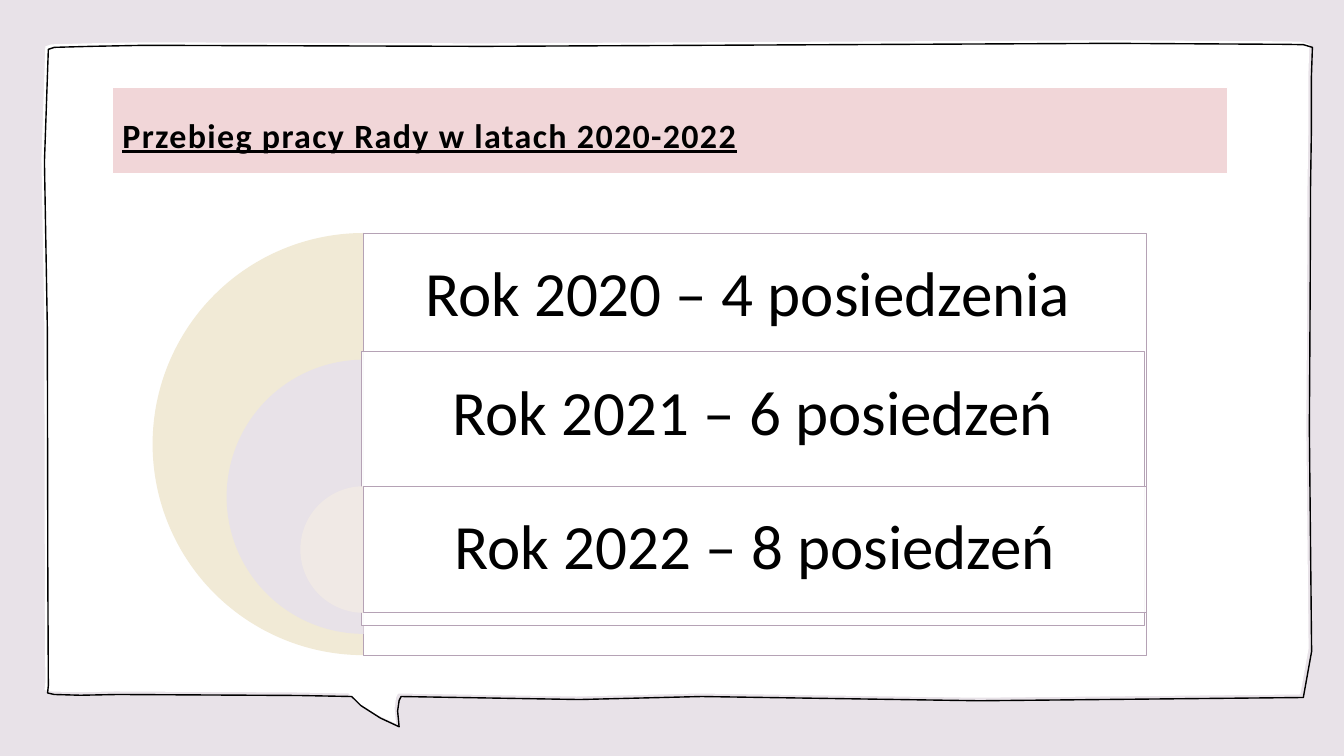
import dataclasses
import typing

import pptx
import pptx.dml.color
import pptx.enum.shapes
import pptx.enum.text
import pptx.oxml
import pptx.oxml.ns
import pptx.shapes.autoshape
import pptx.slide
import pptx.text.text
import pptx.util

COLUMNS = 133.33
ROWS = 75
CELL = pptx.util.Inches(0.1)

LILAC = pptx.dml.color.RGBColor(0xE8, 0xE2, 0xE8)
MAUVE = pptx.dml.color.RGBColor(0xB5, 0xA2, 0xB5)
PINK = pptx.dml.color.RGBColor(0xF1, 0xD6, 0xD8)
SAND = pptx.dml.color.RGBColor(0xF1, 0xEA, 0xD6)
BLUSH = pptx.dml.color.RGBColor(0xF0, 0xE9, 0xE5)
WHITE = pptx.dml.color.RGBColor(0xFF, 0xFF, 0xFF)
BLACK = pptx.dml.color.RGBColor(0, 0, 0)

FONT = "Calibri"
PIE_CENTER = 36.08
PANEL_WIDTH = 77.6
LABEL_HEIGHT = 12.56
LABEL_INSET = 1.9
CURVE_STEPS = 2

Point = tuple[float, float]


@dataclasses.dataclass(frozen=True)
class Box:
    left: float
    top: float
    width: float
    height: float

    def emu(self) -> list[int]:
        return [grid(value) for value in dataclasses.astuple(self)]


@dataclasses.dataclass(frozen=True)
class Year:
    text: str
    color: pptx.dml.color.RGBColor
    diameter: float
    panel_left: float = 36.1
    panel_shift: float = 0


YEARS = (
    Year("Rok 2020 – 4 posiedzenia ", SAND, 41.88),
    Year("Rok 2021 – 6 posiedzeń", LILAC, 27.2, 35.9, -0.8),
    Year("Rok 2022 – 8 posiedzeń", BLUSH, 12.56),
)

BUBBLE_START: Point = (110.3, 4.3)
BUBBLE_SEGMENTS: tuple[tuple[float, ...], ...] = (
    (127.6, 4.4),
    (128.9, 4.5, 130, 4.3, 130.2, 4.7),
    (130.1, 7.7),
    (130.1, 9.4, 130.1, 11.3, 130.1, 13),
    (130, 14.2, 130, 23.5, 130, 24.2),
    (129.8, 33, 130.1, 36.5, 129.9, 42.5),
    (129.8, 65.6, 130.8, 69.5, 129.3, 69.2),
    (105.6, 69.9, 87.2, 69.4, 69.6, 69.1),
    (57.5, 69.4),
    (39.8, 69.1),
    (39.6, 69.5),
    (39.4, 69.9, 39.4, 71, 39.6, 72.1),
    (38.5, 71.6, 37, 71, 35.8, 70),
    (34.9, 69.1),
    (29.6, 69),
    (11.7, 68.9),
    (9, 68.9, 6.6, 69.1, 5.4, 68.9),
    (4.3, 68.8, 4.9, 68.9, 4.8, 68),
    (4.6, 66.5, 4.9, 52.2, 4.7, 32.6),
    (4.2, 20.7, 4.4, 9.6, 4.8, 4.9),
    (5.4, 4.7),
    (9, 4.6),
    (14.3, 4.5),
    (48, 4.6),
)


def grid(cells: float) -> int:
    return round(cells * CELL)


def bubble_points() -> list[Point]:
    points = [BUBBLE_START]
    for segment in BUBBLE_SEGMENTS:
        if len(segment) == 2:
            points.append((segment[0], segment[1]))
            continue
        controls = [points[-1], segment[0:2], segment[2:4], segment[4:6]]
        for step in range(1, CURVE_STEPS + 1):
            t = step / CURVE_STEPS
            weights = ((1 - t) ** 3, 3 * t * (1 - t) ** 2, 3 * t**2 * (1 - t), t**3)
            x, y = (
                sum(weight * control[axis] for weight, control in zip(weights, controls))
                for axis in (0, 1)
            )
            points.append((x, y))
    return points


def paint(
    shape: pptx.shapes.autoshape.Shape,
    fill: typing.Optional[pptx.dml.color.RGBColor] = None,
    line: typing.Optional[pptx.dml.color.RGBColor] = None,
    line_width: float = 0.5,
) -> None:
    shape.shadow.inherit = False
    if fill is None:
        shape.fill.background()
    else:
        shape.fill.solid()
        shape.fill.fore_color.rgb = fill
    if line is None:
        shape.line.fill.background()
    else:
        shape.line.color.rgb = line
        shape.line.width = pptx.util.Pt(line_width)


def add_bubble(slide: pptx.slide.Slide, shift: float) -> pptx.shapes.autoshape.Shape:
    start, *rest = [(grid(x + shift), grid(y + shift)) for x, y in bubble_points()]
    builder = slide.shapes.build_freeform(*start)
    builder.add_line_segments(rest, close=True)
    return builder.convert_to_shape()


def write(
    shape: pptx.shapes.autoshape.Shape, text: str, size: float
) -> pptx.text.text._Paragraph:
    frame = shape.text_frame
    frame.word_wrap = True
    frame.vertical_anchor = pptx.enum.text.MSO_ANCHOR.MIDDLE
    paragraph = frame.paragraphs[0]
    paragraph.text = text
    paragraph.font.name = FONT
    paragraph.font.size = pptx.util.Pt(size)
    paragraph.font.color.rgb = BLACK
    return paragraph


def add_title(slide: pptx.slide.Slide) -> None:
    title = slide.shapes.add_shape(
        pptx.enum.shapes.MSO_SHAPE.RECTANGLE, *Box(11.16, 8.64, 110.6, 8.6).emu()
    )
    paint(title, PINK, WHITE)
    paragraph = write(title, "Przebieg pracy Rady w latach 2020-2022", 24.3)
    title.text_frame.margin_top = grid(1.3)
    paragraph.alignment = pptx.enum.text.PP_ALIGN.LEFT
    paragraph.font.bold = True
    paragraph.font.underline = True
    paragraph._p.find(".//" + pptx.oxml.ns.qn("a:defRPr")).set("spc", "100")


def add_year(slide: pptx.slide.Slide, year: Year, top: float) -> None:
    pie_box = Box(PIE_CENTER - year.diameter / 2, top, year.diameter, year.diameter)
    pie = slide.shapes.add_shape(pptx.enum.shapes.MSO_SHAPE.PIE, *pie_box.emu())
    pie.adjustments[0] = 54
    pie.adjustments[1] = 162
    paint(pie, year.color)

    panel_box = Box(year.panel_left, top + year.panel_shift, PANEL_WIDTH, year.diameter)
    panel = slide.shapes.add_shape(
        pptx.enum.shapes.MSO_SHAPE.RECTANGLE, *panel_box.emu()
    )
    paint(panel, WHITE, MAUVE)
    color = panel._element.spPr.find(".//" + pptx.oxml.ns.qn("a:srgbClr"))
    alpha = pptx.oxml.parse_xml(f'<a:alpha {pptx.oxml.ns.nsdecls("a")} val="90000"/>')
    color.append(alpha)

    label_box = dataclasses.replace(panel_box, height=LABEL_HEIGHT)
    label = slide.shapes.add_textbox(*label_box.emu())
    paragraph = write(label, year.text, 45)
    paragraph.alignment = pptx.enum.text.PP_ALIGN.CENTER
    paragraph.line_spacing = 0.9
    frame = label.text_frame
    frame.margin_left = frame.margin_right = grid(LABEL_INSET)
    frame.margin_top = frame.margin_bottom = grid(LABEL_INSET)


def main() -> None:
    presentation = pptx.Presentation()
    presentation.slide_width = grid(COLUMNS)
    presentation.slide_height = grid(ROWS)
    slide = presentation.slides.add_slide(presentation.slide_layouts[6])
    slide.background.fill.solid()
    slide.background.fill.fore_color.rgb = LILAC

    paint(add_bubble(slide, -0.3), fill=WHITE)
    paint(add_bubble(slide, 0), line=BLACK, line_width=1)
    add_title(slide)
    for index, year in enumerate(YEARS):
        add_year(slide, year, 23.12 + index * LABEL_HEIGHT)
    presentation.save("out.pptx")


if __name__ == "__main__":
    main()
